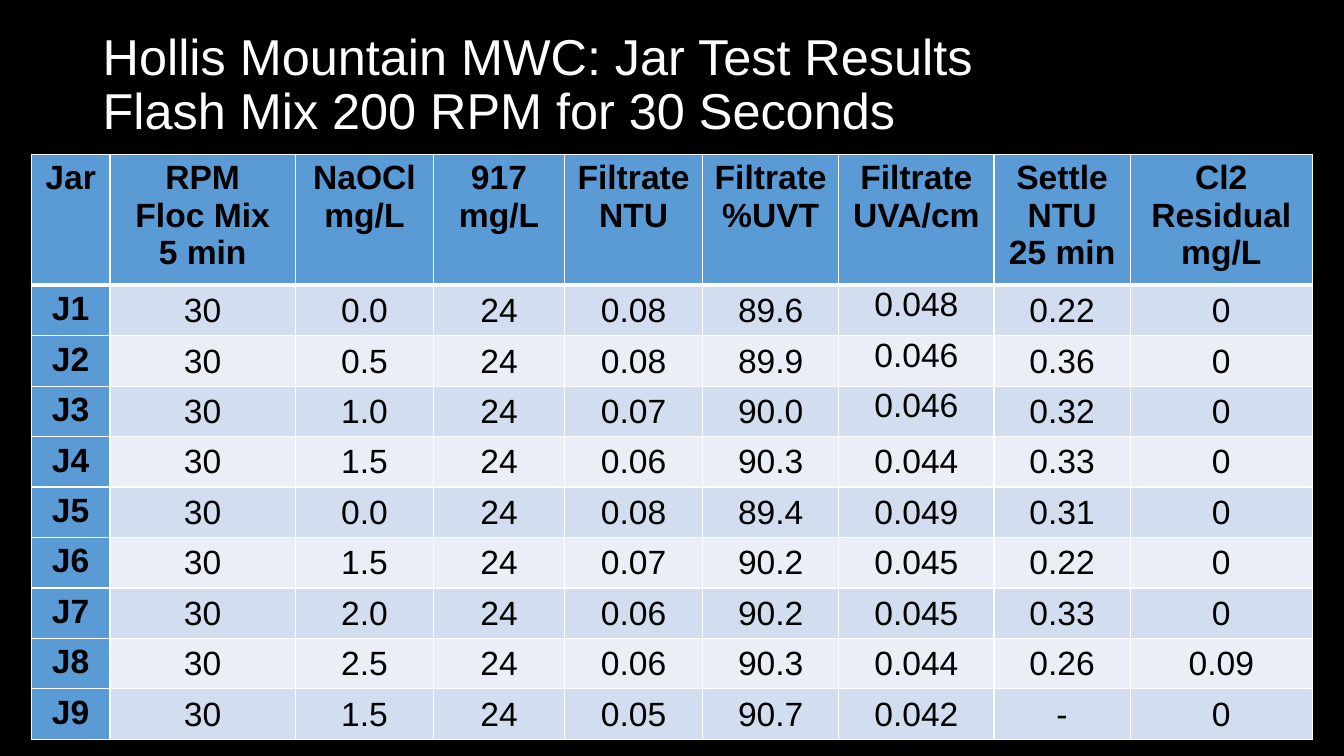
from dataclasses import dataclass

from lxml import etree
from pptx import Presentation
from pptx import util as u
from pptx.dml.color import RGBColor
from pptx.enum import text
from pptx.oxml import ns

BLACK = RGBColor(0x00, 0x00, 0x00)
WHITE = RGBColor(0xFF, 0xFF, 0xFF)
HEADER_BLUE = RGBColor(0x5B, 0x9B, 0xD5)
BANDS = (RGBColor(0xD2, 0xDE, 0xEF), RGBColor(0xEA, 0xEF, 0xF7))

FONT = "Arial"
SLIDE_WIDTH = u.Inches(13.33)
SLIDE_HEIGHT = u.Inches(7.5)
TABLE_LEFT, TABLE_TOP = 2.33, 20.4
HEADER_HEIGHT, BODY_HEIGHT = 16.13, 6.31
TITLE_LINES = ("Hollis Mountain MWC: Jar Test Results",
               "Flash Mix 200 RPM for 30 Seconds")
FLOC_RPM = "30"
DOSE_917 = "24"
TOP_ALIGNED_COLUMN = 6
TOP_ALIGNED_ROWS = 3


@dataclass(frozen=True)
class Column:
    heading: tuple[str, ...]
    width: float


@dataclass(frozen=True)
class JarTest:
    chlorine: str
    filtrate_ntu: str
    uvt: str
    uva: str
    settled_ntu: str
    residual: str = "0"

    def values(self) -> tuple[str, ...]:
        return (FLOC_RPM, self.chlorine, DOSE_917, self.filtrate_ntu,
                self.uvt, self.uva, self.settled_ntu, self.residual)


@dataclass(frozen=True)
class CellStyle:
    fill: RGBColor
    bold: bool = True
    tight: bool = False
    middle: bool = False
    top_line: float = 1
    bottom_line: float = 1


COLUMNS = (
    Column(("Jar",), 5.85),
    Column(("RPM", "Floc Mix", "5 min"), 13.8),
    Column(("NaOCl", "mg/L"), 10.28),
    Column(("917", "mg/L"), 9.75),
    Column(("Filtrate", "NTU"), 10.28),
    Column(("Filtrate", "%UVT"), 10.13),
    Column(("Filtrate", "UVA/cm"), 11.55),
    Column(("Settle", "NTU", "25 min"), 10.13),
    Column(("Cl2", "Residual", "mg/L"), 13.57),
)

JAR_TESTS = (
    JarTest("0.0", "0.08", "89.6", "0.048", "0.22"),
    JarTest("0.5", "0.08", "89.9", "0.046", "0.36"),
    JarTest("1.0", "0.07", "90.0", "0.046", "0.32"),
    JarTest("1.5", "0.06", "90.3", "0.044", "0.33"),
    JarTest("0.0", "0.08", "89.4", "0.049", "0.31"),
    JarTest("1.5", "0.07", "90.2", "0.045", "0.22"),
    JarTest("2.0", "0.06", "90.2", "0.045", "0.33"),
    JarTest("2.5", "0.06", "90.3", "0.044", "0.26", "0.09"),
    JarTest("1.5", "0.05", "90.7", "0.042", "-"),
)


def across(percent: float) -> int:
    return round(SLIDE_WIDTH * percent / 100)


def down(percent: float) -> int:
    return round(SLIDE_HEIGHT * percent / 100)


def add_run(paragraph, words: str, size: float, color: RGBColor, bold: bool) -> None:
    run = paragraph.add_run()
    run.text = words
    run.font.name = FONT
    run.font.size = u.Pt(size)
    run.font.bold = bold
    run.font.color.rgb = color


def add_title(slide) -> None:
    box = slide.shapes.add_textbox(across(6.9), down(1.73), across(86.27), down(19.33))
    frame = box.text_frame
    frame.word_wrap = True
    frame.vertical_anchor = text.MSO_ANCHOR.MIDDLE
    paragraph = frame.paragraphs[0]
    paragraph.line_spacing = 0.9
    for index, line in enumerate(TITLE_LINES):
        if index:
            paragraph.add_line_break()
        add_run(paragraph, line, 36, WHITE, False)


def draw_borders(cell, style: CellStyle) -> None:
    properties = cell._tc.get_or_add_tcPr()
    lines = (("lnL", 1), ("lnR", 1), ("lnT", style.top_line), ("lnB", style.bottom_line))
    for index, (tag, width) in enumerate(lines):
        line = etree.Element(ns.qn(f"a:{tag}"), w=str(u.Pt(width)))
        fill = etree.SubElement(line, ns.qn("a:solidFill"))
        etree.SubElement(fill, ns.qn("a:srgbClr"), val=str(WHITE))
        properties.insert(index, line)


def fill_cell(cell, lines: tuple[str, ...], style: CellStyle) -> None:
    cell.fill.solid()
    cell.fill.fore_color.rgb = style.fill
    if style.tight:
        cell.margin_left = cell.margin_right = cell.margin_top = u.Inches(0.01)
        cell.margin_bottom = 0
    anchors = text.MSO_ANCHOR
    cell.vertical_anchor = anchors.MIDDLE if style.middle else anchors.TOP
    frame = cell.text_frame
    for index, line in enumerate(lines):
        paragraph = frame.add_paragraph() if index else frame.paragraphs[0]
        paragraph.alignment = text.PP_ALIGN.CENTER
        add_run(paragraph, line, 24, BLACK, style.bold)
    draw_borders(cell, style)


def add_results_table(slide) -> None:
    width = sum(column.width for column in COLUMNS)
    height = HEADER_HEIGHT + BODY_HEIGHT * len(JAR_TESTS)
    table = slide.shapes.add_table(
        len(JAR_TESTS) + 1, len(COLUMNS),
        across(TABLE_LEFT), down(TABLE_TOP), across(width), down(height)).table
    table.first_row = table.horz_banding = False
    table.rows[0].height = down(HEADER_HEIGHT)
    for index, column in enumerate(COLUMNS):
        table.columns[index].width = across(column.width)
        fill_cell(table.cell(0, index), column.heading, CellStyle(HEADER_BLUE, bottom_line=3))
    for row, test in enumerate(JAR_TESTS, start=1):
        table.rows[row].height = down(BODY_HEIGHT)
        top_line = 3 if row == 1 else 1
        fill_cell(table.cell(row, 0), (f"J{row}",), CellStyle(HEADER_BLUE, top_line=top_line))
        for column, value in enumerate(test.values(), start=1):
            raised = column == TOP_ALIGNED_COLUMN and row <= TOP_ALIGNED_ROWS
            style = CellStyle(BANDS[(row - 1) % 2], bold=False, tight=True,
                              middle=not raised, top_line=top_line)
            fill_cell(table.cell(row, column), (value,), style)


def main() -> None:
    presentation = Presentation()
    presentation.slide_width = SLIDE_WIDTH
    presentation.slide_height = SLIDE_HEIGHT
    slide = presentation.slides.add_slide(presentation.slide_layouts[6])
    slide.background.fill.solid()
    slide.background.fill.fore_color.rgb = BLACK
    add_title(slide)
    add_results_table(slide)
    presentation.save("out.pptx")


if __name__ == "__main__":
    main()
